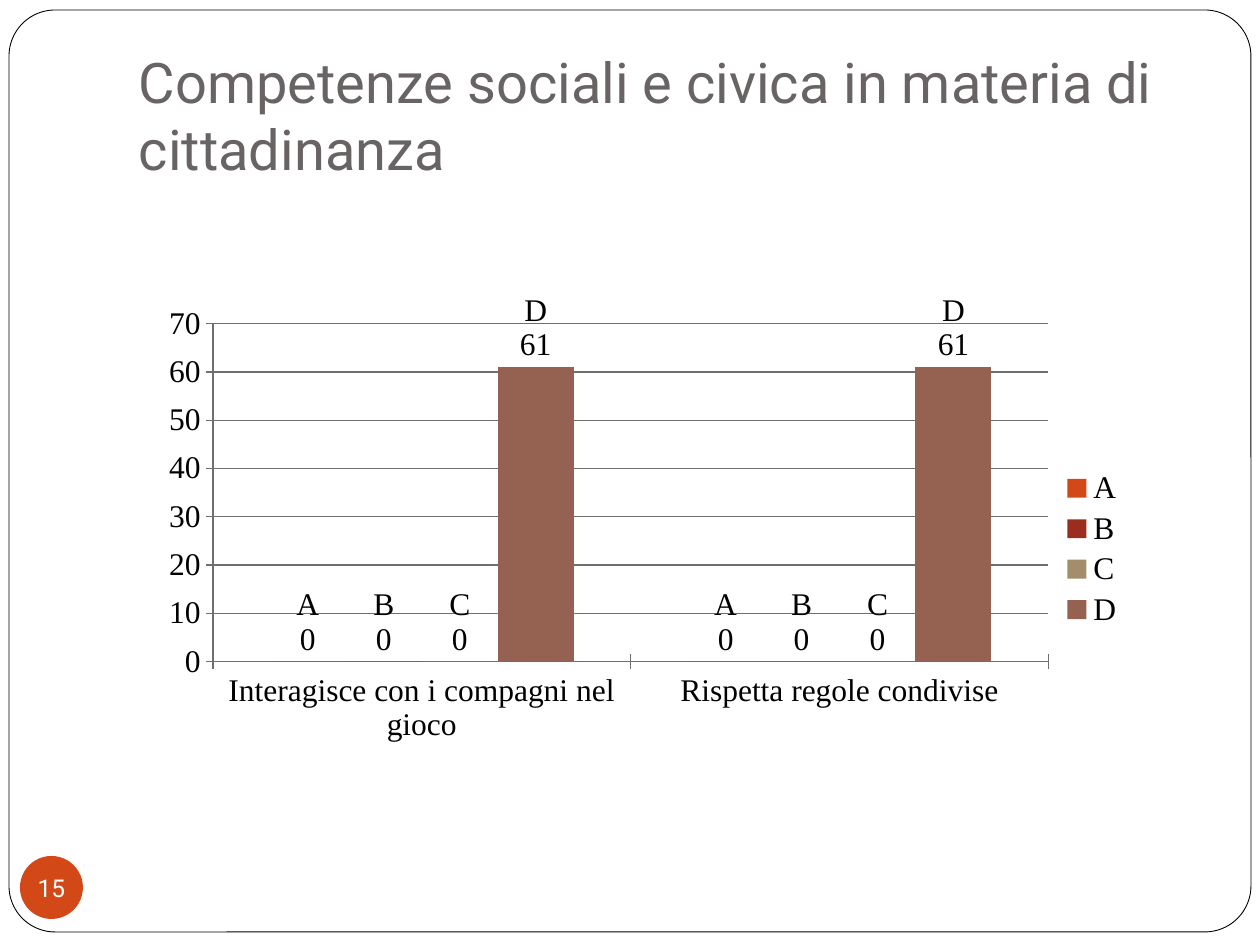
from pptx import Presentation, util as u
from pptx.chart.data import CategoryChartData
from pptx.dml.color import RGBColor
from pptx.enum import chart as ch, shapes, text
from pptx.oxml import parse_xml
from pptx.oxml.ns import nsdecls

PX = 914400 / 126
COLORS = {
    "white": "FFFFFF", "black": "000000", "title": "696464", "grid": "6F6F6F",
    "A": "D34817", "B": "9B2D1F", "C": "A28E6A", "D": "956251",
}
CATS = ["Interagisce con i compagni nel gioco", "Rispetta regole condivise"]
VALUES = {"A": (0, 0), "B": (0, 0), "C": (0, 0), "D": (61, 61)}
PLOT = {"x": 0.06, "y": 0.06, "w": 0.85, "h": 0.66}


def px(*sizes):
    return [u.Emu(round(s * PX)) for s in sizes]


def rgb(name):
    return RGBColor.from_string(COLORS[name])


def style(font, face, size, color):
    font.name, font.size = face, u.Pt(size)
    font.color.rgb = rgb(color)


def write(frame, words, size, color, margins, anchor, align, wrap):
    frame.word_wrap = wrap
    frame.auto_size = text.MSO_AUTO_SIZE.NONE
    frame.vertical_anchor = anchor
    (frame.margin_left, frame.margin_top,
     frame.margin_right, frame.margin_bottom) = px(*margins)
    para = frame.paragraphs[0]
    para.alignment = align
    run = para.add_run()
    run.text = words
    style(run.font, "Roboto", size, color)


def add_shape(slide, kind, box, fill, line=None):
    shape = slide.shapes.add_shape(kind, *px(*box))
    shape.shadow.inherit = False
    shape.fill.solid()
    shape.fill.fore_color.rgb = rgb(fill)
    if line:
        shape.line.color.rgb = rgb(line)
        shape.line.width = u.Pt(0.5)
    else:
        shape.line.fill.background()
    return shape


def add_frame(slide):
    frame = add_shape(slide, shapes.MSO_SHAPE.ROUNDED_RECTANGLE,
                      (9, 10, 1242, 922), "white", "black")
    frame.adjustments[0] = 0.05
    slide.shapes._spTree.insert(2, frame._element)  # behind the title


def set_title(slide, words):
    title = slide.shapes.title
    title.left, title.top, title.width, title.height = px(126, 38, 1071, 157)
    write(title.text_frame, words, 32, "title", (13, 6, 13, 13),
          text.MSO_ANCHOR.BOTTOM, text.PP_ALIGN.LEFT, True)


def add_badge(slide, words):
    badge = add_shape(slide, shapes.MSO_SHAPE.OVAL, (20, 856, 63, 63), "A")
    write(badge.text_frame, words, 14, "white", (0, 0, 0, 0),
          text.MSO_ANCHOR.MIDDLE, text.PP_ALIGN.CENTER, False)


def set_line(line):
    line.color.rgb = rgb("grid")
    line.width = u.Pt(0.75)


def place_plot(chart):
    """Fix the inner plot area as shares of the chart's size."""
    area = chart._chartSpace.chart.plotArea
    for old in area.findall("{*}layout"):
        area.remove(old)
    sizes = "".join(f'<c:{k} val="{v}"/>' for k, v in PLOT.items())
    area.insert(0, parse_xml(
        f'<c:layout {nsdecls("c")}><c:manualLayout>'
        '<c:layoutTarget val="inner"/><c:xMode val="edge"/>'
        f'<c:yMode val="edge"/>{sizes}</c:manualLayout></c:layout>'))


def set_labels(series):
    labels = series.data_labels
    labels.show_value = labels.show_series_name = True
    labels.position = ch.XL_LABEL_POSITION.OUTSIDE_END
    style(labels.font, "Times New Roman", 18, "black")
    mark = parse_xml(f'<c:separator {nsdecls("c")}>\n</c:separator>')
    labels._element.find("{*}showBubbleSize").addnext(mark)


def add_chart(slide):
    data = CategoryChartData()
    data.categories = CATS
    for name, vals in VALUES.items():
        data.add_series(name, vals)
    chart = slide.shapes.add_chart(
        ch.XL_CHART_TYPE.COLUMN_CLUSTERED, *px(154, 293, 983, 512), data).chart
    style(chart.font, "Times New Roman", 18, "black")
    chart.has_title = False
    chart.has_legend = True
    chart.legend.position = ch.XL_LEGEND_POSITION.RIGHT
    chart.legend.include_in_layout = False
    for axis in (chart.category_axis, chart.value_axis):
        axis.major_tick_mark = ch.XL_TICK_MARK.CROSS
        axis.minor_tick_mark = ch.XL_TICK_MARK.NONE
        set_line(axis.format.line)
    axis = chart.value_axis
    axis.minimum_scale, axis.maximum_scale, axis.major_unit = 0, 70, 10
    axis.has_major_gridlines = True
    set_line(axis.major_gridlines.format.line)
    plot = chart.plots[0]
    plot.gap_width, plot.overlap = 150, 0
    plot.vary_by_categories = False
    for series in plot.series:
        series.format.fill.solid()
        series.format.fill.fore_color.rgb = rgb(series.name)
        set_labels(series)
    place_plot(chart)


def main():
    deck = Presentation()
    deck.slide_width, deck.slide_height = px(1260, 945)
    slide = deck.slides.add_slide(deck.slide_layouts[5])
    add_frame(slide)
    set_title(slide, "Competenze sociali e civica in materia di cittadinanza")
    add_badge(slide, "15")
    add_chart(slide)
    deck.save("out.pptx")


if __name__ == "__main__":
    main()
